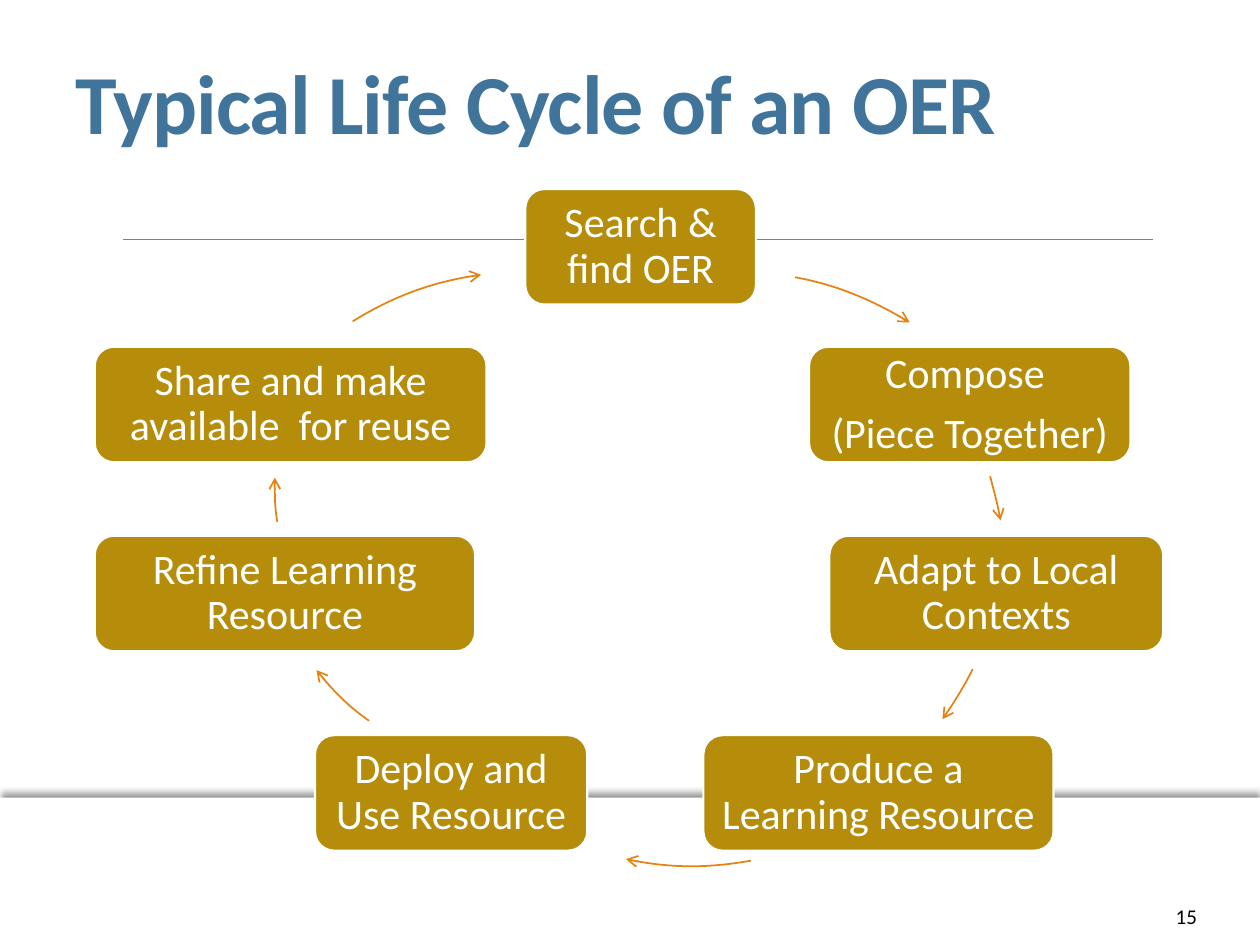
import pptx
import pptx.dml.color
import pptx.enum.shapes
import pptx.enum.text
import pptx.oxml
import pptx.oxml.ns
import pptx.util
from pptx.util import Cm

COLORS = {
    "title": "40749B",
    "node": "B58D0B",
    "arrow": "E48312",
    "rule": "808080",
    "white": "FFFFFF",
    "black": "000000",
}
NODE_HEIGHT = 2.33
RING_SIZE = Cm(13.36)
NAMESPACE = pptx.oxml.ns.nsdecls("a")


def color(name):
    return pptx.dml.color.RGBColor.from_string(COLORS[name])


def style_paragraph(para, size, name, align, spacing=None):
    para.alignment = align
    para.line_spacing = spacing
    para.font.size = pptx.util.Pt(size)
    para.font.name = "Calibri"
    para.font.color.rgb = color(name)


shapes_enum = pptx.enum.shapes.MSO_SHAPE
align_enum = pptx.enum.text.PP_ALIGN
anchor_enum = pptx.enum.text.MSO_ANCHOR

deck = pptx.Presentation()
deck.slide_width = Cm(25.4)
deck.slide_height = Cm(19.05)
page = deck.slides.add_slide(deck.slide_layouts[6])

rule = page.shapes.add_connector(
    pptx.enum.shapes.MSO_CONNECTOR.STRAIGHT, Cm(2.48), Cm(4.83), Cm(23.24), Cm(4.83)
)
rule.line.color.rgb = color("rule")
rule.line.width = pptx.util.Pt(0.5)
rule._element.spPr.append(pptx.oxml.parse_xml(f"<a:effectLst {NAMESPACE}/>"))

footer = page.shapes.add_shape(shapes_enum.RECTANGLE, 0, Cm(16.08), Cm(25.4), Cm(2.97))
footer.fill.solid()
footer.fill.fore_color.rgb = color("white")
footer.line.fill.background()
footer._element.spPr.append(
    pptx.oxml.parse_xml(
        f"<a:effectLst {NAMESPACE}>"
        '<a:outerShdw blurRad="50800" dist="38100" dir="16200000" rotWithShape="0">'
        f'<a:srgbClr val="{COLORS["black"]}"><a:alpha val="40000"/></a:srgbClr>'
        "</a:outerShdw></a:effectLst>"
    )
)

number = page.shapes.add_textbox(Cm(22.02), Cm(17.83), Cm(2.11), Cm(1.02))
number.text_frame.word_wrap = True
number.text_frame.margin_left = number.text_frame.margin_right = 0
number.text_frame.vertical_anchor = anchor_enum.BOTTOM
number.text_frame.text = "15"
style_paragraph(number.text_frame.paragraphs[0], 12, "black", align_enum.RIGHT)

title = page.shapes.add_textbox(Cm(1.27), 0, Cm(22.86), Cm(3.18))
title.text_frame.word_wrap = True
title.text_frame.vertical_anchor = anchor_enum.BOTTOM
title.text_frame.text = "Typical Life Cycle of an OER"
heading = title.text_frame.paragraphs[0]
style_paragraph(heading, 48, "title", align_enum.LEFT, 0.85)
heading.font.bold = True
heading.runs[0]._r.get_or_add_rPr().set("spc", "-50")

nodes = [
    ("Search & find OER", 10.59, 3.81, 4.65),
    ("Compose \n(Piece Together)", 16.31, 6.99, 6.48),
    ("Adapt to Local Contexts", 16.72, 10.8, 6.73),
    ("Produce a Learning Resource", 14.18, 14.82, 7.06),
    ("Deploy and Use Resource", 6.35, 14.82, 5.49),
    ("Refine Learning Resource", 1.91, 10.8, 7.67),
    ("Share and make available  for reuse", 1.91, 6.99, 7.9),
]
for text, left, top, width in nodes:
    box = page.shapes.add_shape(
        shapes_enum.ROUNDED_RECTANGLE, Cm(left), Cm(top), Cm(width), Cm(NODE_HEIGHT)
    )
    box.shadow.inherit = False
    box.fill.solid()
    box.fill.fore_color.rgb = color("node")
    box.line.color.rgb = color("white")
    box.line.width = pptx.util.Pt(1.25)
    frame = box.text_frame
    frame.word_wrap = True
    frame.vertical_anchor = anchor_enum.MIDDLE
    frame.margin_left = frame.margin_right = Cm(0.25)
    frame.margin_top = frame.margin_bottom = Cm(0.25)
    frame.text = text
    for para in frame.paragraphs:
        style_paragraph(para, 24, "white", align_enum.CENTER, 0.9)
        para.space_after = pptx.util.Pt(8.4)

arrows = [
    ((8.05, 5.46), [(16.03, 5.59), (16.84, 5.74), (17.63, 6.07), (18.34, 6.5)]),
    ((6.91, 4.9), [(19.96, 9.6), (20.04, 9.91), (20.12, 10.19), (20.17, 10.49)]),
    ((6.88, 3.94), [(19.61, 13.49), (19.43, 13.84), (19.23, 14.17), (19, 14.5)]),
    ((7.26, 4.09), [(15.14, 17.35), (14.3, 17.5), (13.46, 17.5), (12.62, 17.32)]),
    ((4.8, 2.54), [(7.44, 14.53), (7.04, 14.25), (6.68, 13.89), (6.38, 13.51)]),
    ((5.54, 3.1), [(5.59, 10.52), (5.54, 10.21), (5.54, 9.91), (5.54, 9.63)]),
    ((3.91, 5.49), [(7.11, 6.48), (7.9, 5.99), (8.79, 5.66), (9.7, 5.54)]),
]
for (ring_left, ring_top), controls in arrows:
    builder = page.shapes.build_freeform(0, 0)
    builder.add_line_segments([(RING_SIZE, RING_SIZE)], close=False)
    arrow = builder.convert_to_shape(Cm(ring_left), Cm(ring_top))
    start, *bends = [
        f'<a:pt x="{Cm(x) - Cm(ring_left)}" y="{Cm(y) - Cm(ring_top)}"/>'
        for x, y in controls
    ]
    outline = next(arrow._element.iter(pptx.oxml.ns.qn("a:path")))
    for segment in list(outline):
        outline.remove(segment)
    outline.append(pptx.oxml.parse_xml(f"<a:moveTo {NAMESPACE}>{start}</a:moveTo>"))
    outline.append(
        pptx.oxml.parse_xml(f"<a:cubicBezTo {NAMESPACE}>{''.join(bends)}</a:cubicBezTo>")
    )
    arrow.shadow.inherit = False
    arrow.fill.background()
    arrow.line.color.rgb = color("arrow")
    arrow.line.width = pptx.util.Pt(1)
    arrow.line._get_or_add_ln().append(
        pptx.oxml.parse_xml(f'<a:tailEnd {NAMESPACE} type="arrow"/>')
    )

deck.save("out.pptx")
